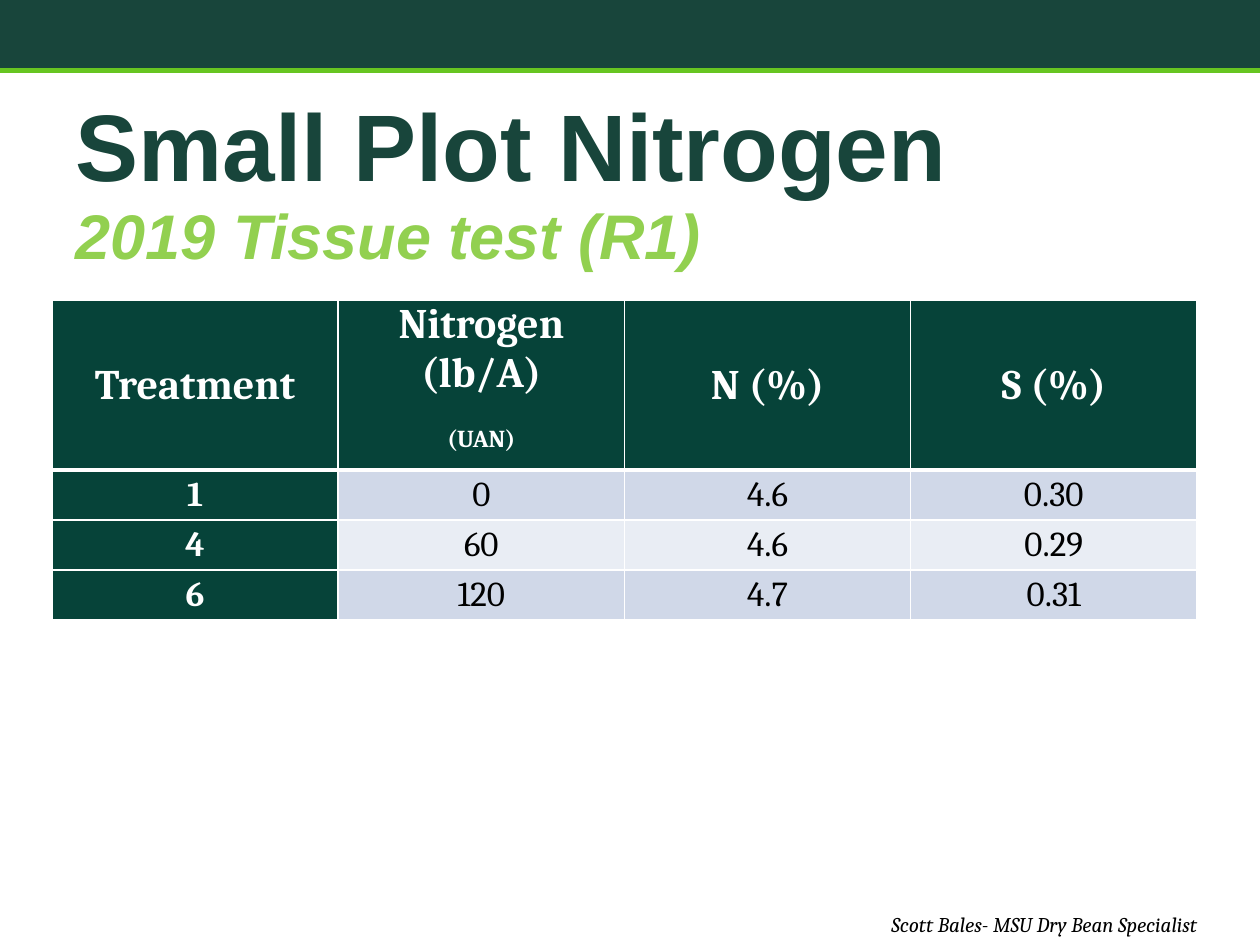
from lxml.etree import SubElement
from pptx import Presentation
from pptx.dml.color import RGBColor
from pptx.enum.shapes import MSO_SHAPE
from pptx.enum.text import MSO_ANCHOR, PP_ALIGN
from pptx.oxml.ns import qn
from pptx.util import Pt

PX = 914400 // 126
SLIDE_W, SLIDE_H = 1260, 945

DARK_GREEN = RGBColor(0x18, 0x45, 0x3B)
BRIGHT_GREEN = RGBColor(0x67, 0xC5, 0x21)
LIME = RGBColor(0x92, 0xD0, 0x50)
TABLE_GREEN = RGBColor(0x06, 0x43, 0x39)
BANDS = RGBColor(0xD0, 0xD8, 0xE8), RGBColor(0xE9, 0xED, 0xF4)
WHITE = RGBColor(0xFF, 0xFF, 0xFF)
BLACK = RGBColor(0, 0, 0)

HEADINGS = ["Treatment", "Nitrogen (lb/A)", "N (%)", "S (%)"]
RESULTS = [
    ["1", "0", "4.6", "0.30"],
    ["4", "60", "4.6", "0.29"],
    ["6", "120", "4.7", "0.31"],
]


def px(*lengths):
    return [length * PX for length in lengths]


def write(paragraph, text, *, size, font="Cambria", color=BLACK, bold=False,
          italic=False, align=PP_ALIGN.LEFT, spacing=None, baseline=None):
    paragraph.alignment = align
    if spacing is not None:
        paragraph.line_spacing = spacing
    run = paragraph.add_run()
    run.text = text
    run.font.name = font
    run.font.size = Pt(size)
    run.font.bold = bold
    run.font.italic = italic
    run.font.color.rgb = color
    if baseline:
        run.font._element.set("baseline", str(baseline * 1000))


def add_bar(slide, left, top, width, height, color):
    bar = slide.shapes.add_shape(MSO_SHAPE.RECTANGLE, *px(left, top, width, height))
    bar.shadow.inherit = False
    bar.fill.solid()
    bar.fill.fore_color.rgb = color
    bar.line.fill.background()


def add_banner(slide, left, top, width, height):
    rule = 6
    add_bar(slide, left, top + height - rule, width, rule, BRIGHT_GREEN)
    add_bar(slide, left, top, width, height - rule + 1, DARK_GREEN)


def place_title(slide, left, top, width, height):
    title = slide.shapes.title
    title.left, title.top, title.width, title.height = px(left, top, width, height)
    frame = title.text_frame
    frame.word_wrap = True
    frame.vertical_anchor = MSO_ANCHOR.TOP
    heading = dict(font="Arial", bold=True)
    write(frame.paragraphs[0], "Small Plot Nitrogen", size=54,
          color=DARK_GREEN, spacing=Pt(48), **heading)
    subtitle = frame.add_paragraph()
    subtitle.space_before = Pt(0)
    write(subtitle, "2019 Tissue test (R1)", size=36,
          color=LIME, italic=True, spacing=Pt(41), **heading)


def format_cell(cell, fill, top=1, bottom=1):
    """Set margins, white borders (widths in points) and fill."""
    cell.vertical_anchor = MSO_ANCHOR.MIDDLE
    cell.margin_left, cell.margin_right, cell.margin_top, cell.margin_bottom = px(1, 1, 1, 0)
    properties = cell._tc.get_or_add_tcPr()
    for side, width in (("L", 1), ("R", 1), ("T", top), ("B", bottom)):
        border = SubElement(properties, qn(f"a:ln{side}"), w=str(Pt(width)))
        solid = SubElement(border, qn("a:solidFill"))
        SubElement(solid, qn("a:srgbClr"), val=str(WHITE))
    cell.fill.solid()
    cell.fill.fore_color.rgb = fill


def add_results(slide, left, top, width, height):
    row_height = 50
    table = slide.shapes.add_table(len(RESULTS) + 1, len(HEADINGS),
                                   *px(left, top, width, height)).table
    table.first_row = table.horz_banding = False
    for column in table.columns:
        column.width = width * PX // len(HEADINGS)
    for row in table.rows:
        row.height = row_height * PX
    table.rows[0].height = (height - row_height * len(RESULTS)) * PX

    heading = dict(size=24, color=WHITE, bold=True, align=PP_ALIGN.CENTER)
    for c, text in enumerate(HEADINGS):
        cell = table.cell(0, c)
        format_cell(cell, TABLE_GREEN, bottom=3)
        write(cell.text_frame.paragraphs[0], text, **heading)
    write(table.cell(0, 1).text_frame.add_paragraph(), "(UAN)",
          spacing=1.5, baseline=30, **heading)

    for r, values in enumerate(RESULTS):
        for c, text in enumerate(values):
            cell = table.cell(r + 1, c)
            is_label = c == 0
            format_cell(cell, TABLE_GREEN if is_label else BANDS[r % 2],
                        top=3 if r == 0 else 1)
            write(cell.text_frame.paragraphs[0], text, size=20, bold=is_label,
                  color=WHITE if is_label else BLACK, align=PP_ALIGN.CENTER)


def add_credit(slide, left, top, width, height):
    credit = slide.shapes.add_textbox(*px(left, top, width, height)).text_frame
    credit.word_wrap = True
    write(credit.paragraphs[0], "Scott Bales- MSU Dry Bean Specialist",
          size=12, italic=True)


def main():
    deck = Presentation()
    deck.slide_width, deck.slide_height = px(SLIDE_W, SLIDE_H)
    slide = deck.slides.add_slide(deck.slide_layouts[5])
    add_banner(slide, 0, 0, SLIDE_W, 73)
    place_title(slide, 63, 110, 1134, 67)
    add_results(slide, 52, 300, 1145, 257)
    add_credit(slide, 879, 905, 381, 38)
    deck.save("out.pptx")


if __name__ == "__main__":
    main()
